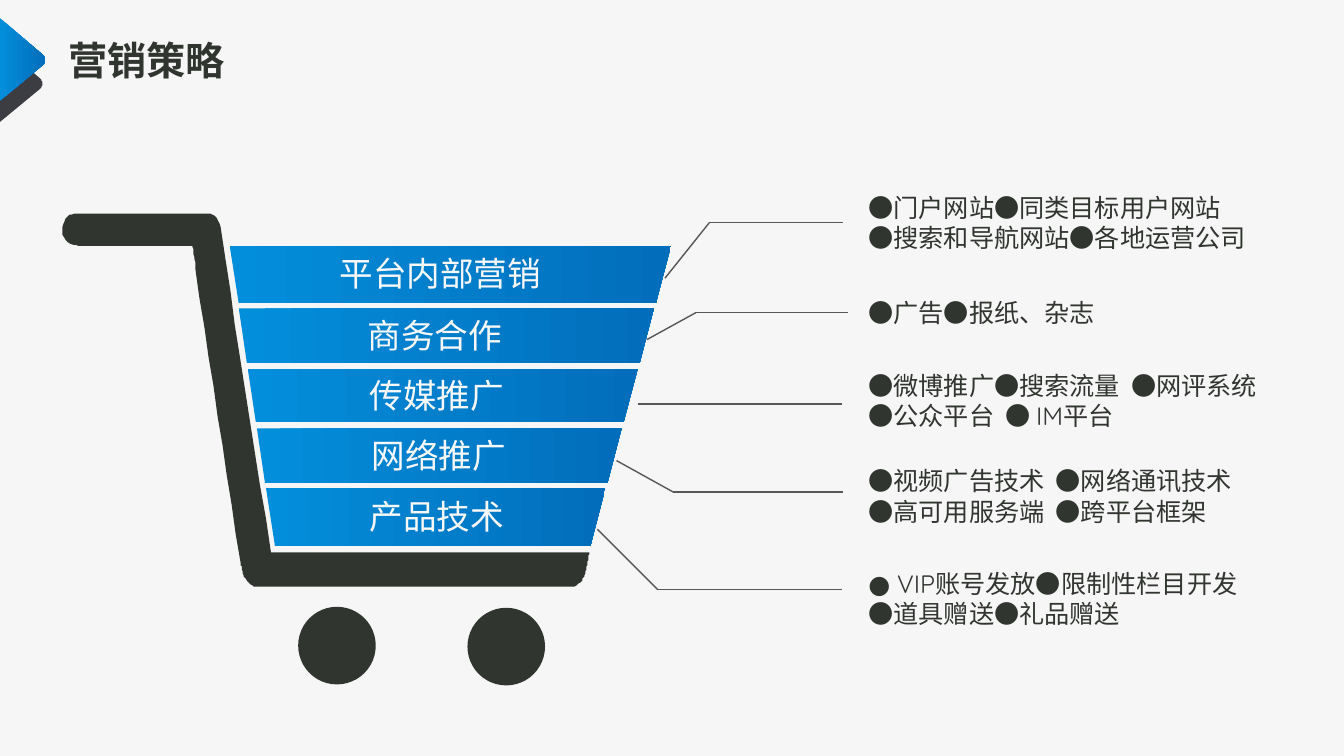
from pptx import Presentation
from pptx.dml.color import RGBColor
from pptx.enum.shapes import MSO_CONNECTOR, MSO_SHAPE
from pptx.enum.text import PP_ALIGN
from pptx.oxml.ns import qn
from pptx.util import Pt
from lxml.etree import SubElement, Element

PX = 9144  # 100 px to the inch
COLORS = {name: RGBColor.from_string(code) for name, code in {
    "back": "F6F6F6", "dark": "313530", "shade": "3C3D42", "light": "F8F8F8",
    "blue": "038EDB", "deep": "026EBB", "line": "575757"}.items()}

deck = Presentation()
deck.slide_width, deck.slide_height = 1334 * PX, 750 * PX
slide = deck.slides.add_slide(deck.slide_layouts[6])
slide.background.fill.solid()
slide.background.fill.fore_color.rgb = COLORS["back"]
shapes = slide.shapes


def add_text(box, lines, size, color, bold=False, wrap=True, align=PP_ALIGN.LEFT):
    """Add a text box; each line is a pair of text and tab stop (0 for none)."""
    frame = shapes.add_textbox(*(v * PX for v in box)).text_frame
    frame.word_wrap = wrap
    for i, (text, stop) in enumerate(lines):
        para = frame.add_paragraph() if i else frame.paragraphs[0]
        para.text = text
        para.alignment = align
        para.font.name = "Quicksand"
        para.font.size = Pt(size)
        para.font.bold = bold
        para.font.color.rgb = COLORS[color]
        if stop:
            tabs = Element(qn("a:tabLst"))
            SubElement(tabs, qn("a:tab"), pos=str(stop * PX), algn="l")
            para._p.get_or_add_pPr().insert(0, tabs)


def add_outline(path, *colors):
    """Draw a closed outline; a step of six numbers is a cubic curve."""
    points = [path[0]]
    for step in path[1:]:
        if len(step) == 2:
            points.append(step)
            continue
        ax, ay = points[-1]
        bx, by, cx, cy, dx, dy = step
        for t in (n / 10 for n in range(1, 11)):
            u = 1 - t
            a, b, c, d = u**3, 3 * u * u * t, 3 * u * t * t, t**3
            points.append((a * ax + b * bx + c * cx + d * dx,
                           a * ay + b * by + c * cy + d * dy))
    pen = shapes.build_freeform(*points[0], scale=PX)
    pen.add_line_segments(points[1:], close=True)
    shape = pen.convert_to_shape()
    shape.shadow.inherit = False
    shape.line.fill.background()
    if len(colors) == 1:
        shape.fill.solid()
        shape.fill.fore_color.rgb = COLORS[colors[0]]
    else:
        shape.fill.gradient()
        shape.fill.gradient_angle = 0
        for stop, color in zip(shape.fill.gradient_stops, colors):
            stop.color.rgb = COLORS[color]


# Title and corner mark
add_text((58, 31, 512, 57), [("营销策略", 0)], 28, "dark", bold=True)
add_outline([(0, 44), (40, 78), (43, 81, 43, 85, 40, 88), (0, 121)], "shade")
add_outline([(0, 18), (42, 54), (46, 57, 46, 62, 42, 65), (0, 100)], "blue", "deep")

# Cart frame and wheels
add_outline([
    (219, 225), (217, 215, 212, 212, 206, 212), (76, 212),
    (68, 212, 62, 216, 62, 229), (62, 243, 76, 244, 83, 244), (191, 244),
    (192, 248, 194, 261, 194, 267), (208, 363, 224, 462, 239, 559),
    (240, 565, 241, 569, 243, 573), (245, 578, 250, 582, 255, 582), (567, 582),
    (573, 582, 577, 578, 579, 573), (581, 569, 582, 565, 583, 559),
    (584, 555, 584, 552, 585, 548), (269, 548), (251, 434, 235, 335, 219, 225),
], "dark")
for left, top in [(296, 602), (464, 603)]:
    wheel = shapes.add_shape(MSO_SHAPE.OVAL, left * PX, top * PX, 77 * PX, 77 * PX)
    wheel.shadow.inherit = False
    wheel.fill.solid()
    wheel.fill.fore_color.rgb = COLORS["dark"]
    wheel.line.fill.background()

# Bands fill the basket, whose sides slope inwards
bands = [
    (244, 301, "平台内部营销", (326, 246, 222, 50)),
    (306, 360, "商务合作", (354, 308, 155, 50)),
    (366, 419, "传媒推广", (356, 367, 155, 50)),
    (425, 479, "网络推广", (358, 427, 155, 50)),
    (484, 542, "产品技术", (356, 487, 155, 50)),
]
for top, bottom, label, box in bands:
    sides = [(228 + 0.15 * (y - 244), 666 - 0.27 * (y - 244)) for y in (top, bottom)]
    (tl, tr), (bl, br) = sides
    add_outline([(tl, top), (tr, top), (br, bottom), (bl, bottom)], "blue", "deep")
    add_text(box, [(label, 0)], 24, "light", wrap=False, align=PP_ALIGN.CENTER)

# Leader lines from the bands to the notes
leaders = [
    [(660, 276), (704, 221), (837, 221)],
    [(642, 337), (691, 310), (842, 310)],
    [(633, 401), (836, 401)],
    [(612, 457), (668, 488), (837, 488)],
    [(593, 525), (653, 585), (836, 585)],
]
for leader in leaders:
    for (x1, y1), (x2, y2) in zip(leader, leader[1:]):
        line = shapes.add_connector(
            MSO_CONNECTOR.STRAIGHT, x1 * PX, y1 * PX, x2 * PX, y2 * PX)
        line.line.color.rgb = COLORS["line"]
        line.line.width = Pt(1)
        SubElement(line._element.spPr, qn("a:effectLst"))

notes = [
    (186, 429, [("●门户网站●同类目标用户网站", 0), ("●搜索和导航网站●各地运营公司", 0)]),
    (290, 422, [("●广告●报纸、杂志", 0)]),
    (362, 429, [("●微博推广●搜索流量\t●网评系统", 261), ("●公众平台\t● IM平台", 136)]),
    (457, 422, [("●视频广告技术\t●网络通讯技术", 186), ("●高可用服务端\t●跨平台框架", 186)]),
    (559, 429, [("● VIP账号发放●限制性栏目开发", 0), ("●道具赠送●礼品赠送", 0)]),
]
for top, width, lines in notes:
    add_text((852, top, width, 10 + 30 * len(lines)), lines, 18, "dark")

deck.save("out.pptx")
